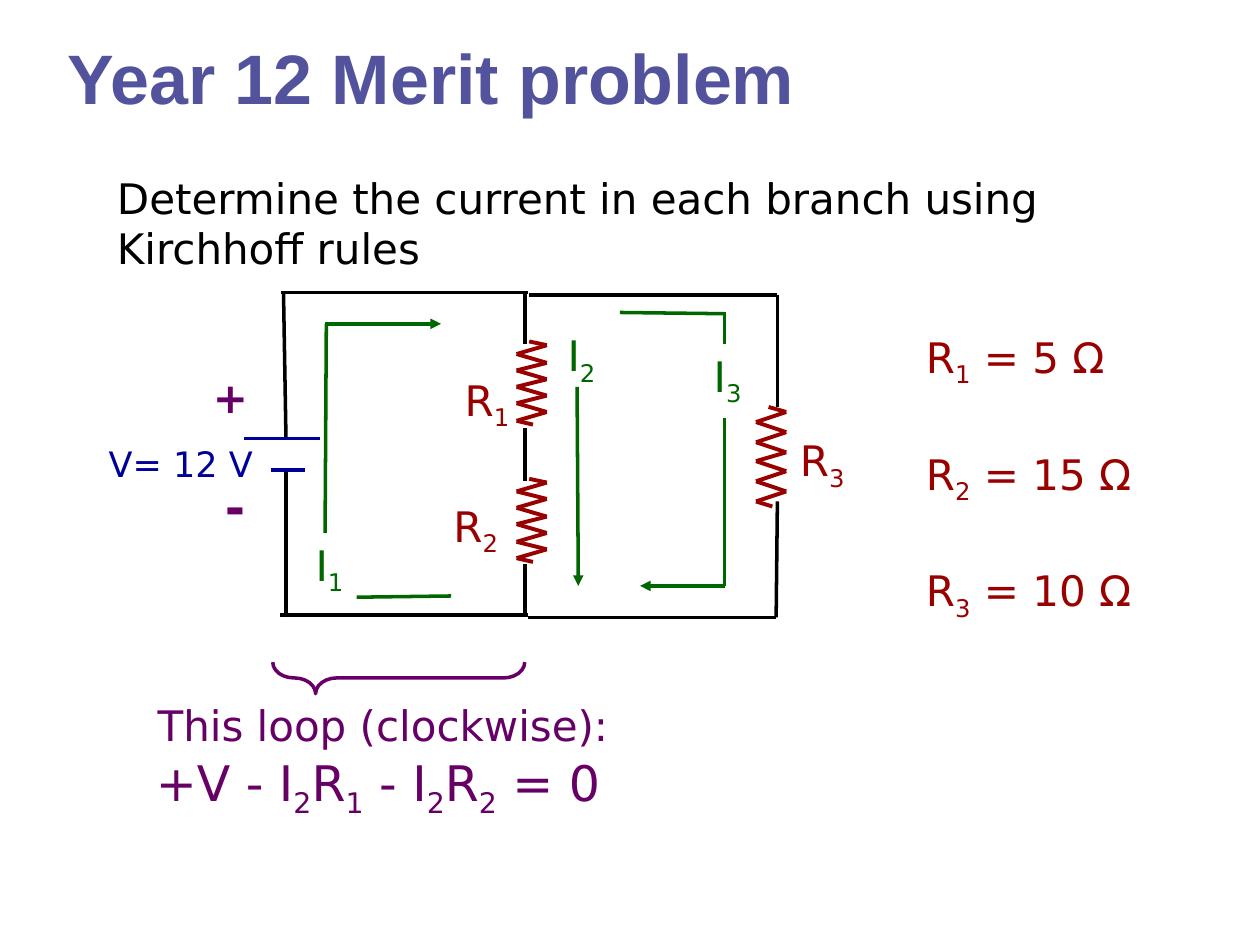
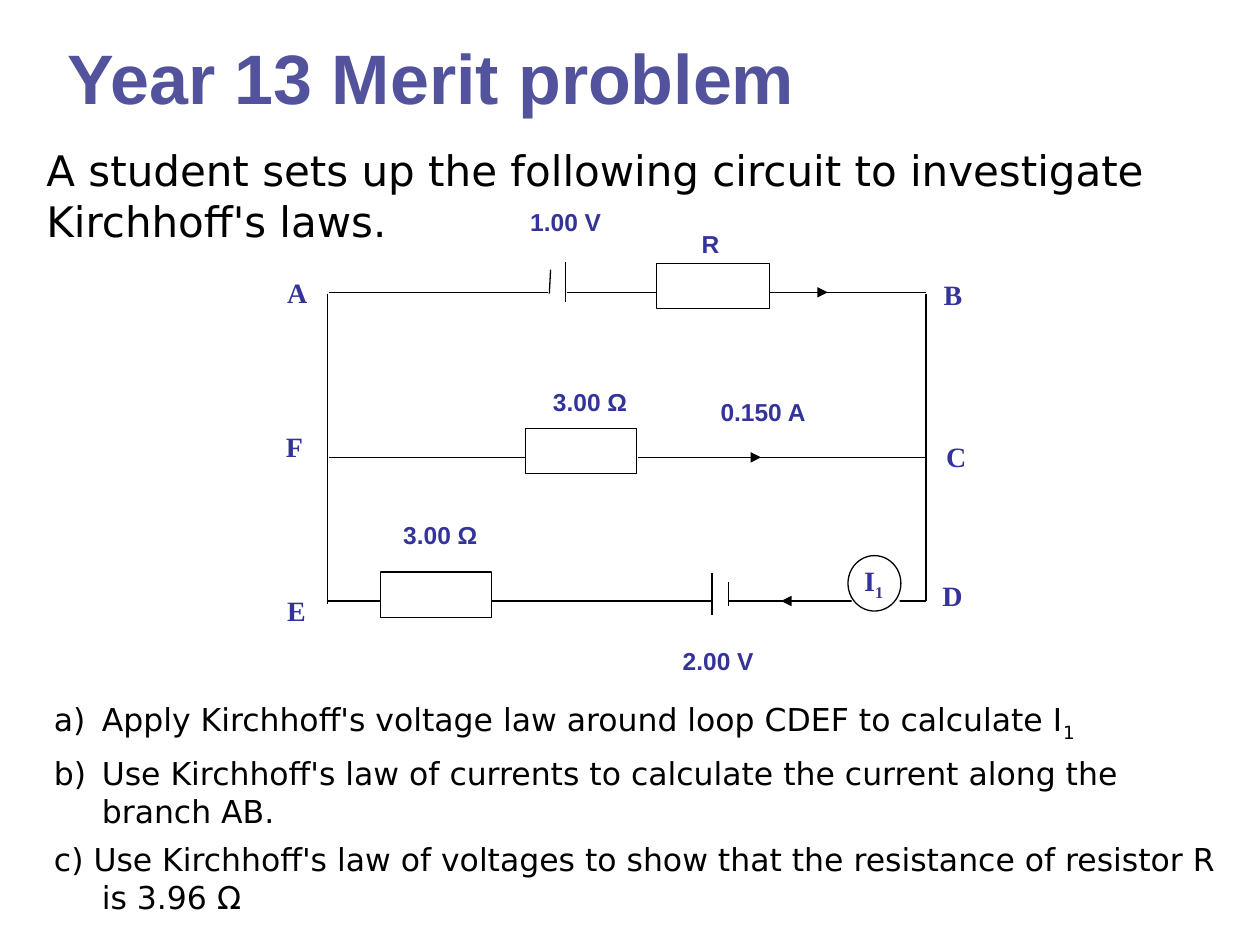
from dataclasses import dataclass
from itertools import pairwise

from pptx import Presentation
from pptx import util as u
from pptx.dml.color import RGBColor
from pptx.enum import shapes, text
from pptx.oxml.ns import qn
from lxml import etree

PX = 9144
SHAPE = shapes.MSO_SHAPE
LEFT, CENTER = text.PP_ALIGN.LEFT, text.PP_ALIGN.CENTER


@dataclass(frozen=True)
class Theme:
    title: str = "52529D"
    ink: str = "000000"
    paper: str = "FFFFFF"
    current: str = "006600"
    loop: str = "660066"
    resistor: str = "990000"
    battery: str = "000099"
    label: str = "333399"
    heading_font: str = "Arial"
    body_font: str = "DejaVu Sans"
    node_font: str = "Times New Roman"
    title_size: int = 40
    equation_size: int = 28
    body_size: int = 24
    battery_size: int = 20
    question_size: int = 18
    node_size: int = 16
    label_size: int = 14
    wire: float = 2
    heavy: float = 2.25
    thin: float = 0.75


def emu(*lengths):
    return [u.Emu(round(n) * PX) for n in lengths]


class Deck:
    def __init__(self, theme):
        self.theme = theme
        self.prs = Presentation()
        self.prs.slide_width, self.prs.slide_height = emu(1000, 750)
        self.slide = None

    def new_slide(self, title):
        t = self.theme
        self.slide = self.prs.slides.add_slide(self.prs.slide_layouts[5])
        sp = self.slide.shapes.title
        sp.left, sp.top, sp.width, sp.height = emu(40, 22, 604, 77)
        self.fill_text(sp, [title], t.title_size, t.title, t.heading_font, CENTER, True, wrap=False)

    def fill_text(self, sp, lines, size, color, font=None, align=LEFT, bold=False, after=0, wrap=True):
        tf = sp.text_frame
        frame = {"word_wrap": wrap, "auto_size": text.MSO_AUTO_SIZE.NONE,
                 "vertical_anchor": text.MSO_ANCHOR.TOP}
        for name, value in frame.items():
            setattr(tf, name, value)
        style = {"size": u.Pt(size), "bold": bold, "name": font or self.theme.body_font}
        for i, line in enumerate(lines):
            p = tf.paragraphs[0] if i == 0 else tf.add_paragraph()
            for name, value in {"alignment": align, "space_after": u.Pt(after)}.items():
                setattr(p, name, value)
            first, *rest = line.split("_")
            pieces = [(first, False)]
            for part in rest:
                pieces += [(part[0], True), (part[1:], False)]
            for piece, lowered in pieces:
                if not piece:
                    continue
                r = p.add_run()
                r.text = piece
                for name, value in style.items():
                    setattr(r.font, name, value)
                r.font.color.rgb = RGBColor.from_string(color)
                if lowered:
                    r._r.get_or_add_rPr().set("baseline", "-25000")
        return tf

    def text(self, box, lines, size, color, **style):
        sp = self.slide.shapes.add_textbox(*emu(*box))
        return self.fill_text(sp, lines, size, color, **style)

    def shape(self, kind, box, fill=None, line=None, width=0.75):
        sp = self.slide.shapes.add_shape(kind, *emu(*box))
        sp.shadow.inherit = False
        if fill:
            sp.fill.solid()
            sp.fill.fore_color.rgb = RGBColor.from_string(fill)
        else:
            sp.fill.background()
        if line:
            sp.line.color.rgb = RGBColor.from_string(line)
            sp.line.width = u.Pt(width)
        else:
            sp.line.fill.background()
        return sp

    def line(self, ends, color, width, arrow=False):
        sp = self.slide.shapes.add_connector(shapes.MSO_CONNECTOR.STRAIGHT, *emu(*ends))
        sp.line.color.rgb = RGBColor.from_string(color)
        sp.line.width = u.Pt(width)
        if arrow:
            etree.SubElement(sp.get_or_add_ln(), qn("a:tailEnd"), type="triangle")
        etree.SubElement(sp._element.spPr, qn("a:effectLst"))

    def lines(self, segments, color, width, arrow=False):
        for ends in segments:
            self.line(ends, color, width, arrow)

    def zigzag(self, left, top, bottom):
        pitch = (bottom - top) / 10
        points = [(left + 10, top)]
        points += [(left + 24 * (i % 2 == 0), top + pitch * (i + 0.5)) for i in range(10)]
        points.append((left + 13, bottom))
        self.lines([a + b for a, b in pairwise(points)], self.theme.resistor, self.theme.heavy)

    def label(self, box, words, size, font, align=LEFT):
        sp = self.shape(SHAPE.RECTANGLE, box, self.theme.paper)
        self.fill_text(sp, [words], size, self.theme.label, font, align, True)

    def numbered(self, p, indent, numbering):
        pPr = p._p.get_or_add_pPr()
        pPr.set("marL", str(indent * PX))
        pPr.set("indent", str(-indent * PX))
        if numbering:
            etree.SubElement(pPr, qn("a:buFont"), typeface=self.theme.body_font)
            etree.SubElement(pPr, qn("a:buAutoNum"), type=numbering)


def year_12(deck):
    t = deck.theme
    deck.new_slide("Year 12 Merit problem")
    deck.text((83, 132, 808, 91), ["Determine the current in each branch using Kirchhoff rules"],
              t.body_size, t.ink)

    outer_wires = [
        (223, 232, 419, 232), (227, 348, 225, 232), (227, 490, 227, 373), (222, 488, 419, 488),
        (420, 234, 617, 234), (617, 234, 617, 323), (617, 398, 616, 490), (419, 490, 616, 490),
    ]
    middle_wires = [(417, top, 417, bottom) for top, bottom in ((232, 273), (340, 382), (448, 490))]
    battery_plates = [(194, 348, 254, 348), (215, 373, 242, 373)]
    deck.lines(outer_wires, t.ink, t.wire)
    deck.lines(middle_wires, t.ink, t.heavy)
    deck.lines(battery_plates, t.battery, t.heavy)

    for left, top, bottom in ((410, 271, 337), (410, 380, 446), (600, 323, 402)):
        deck.zigzag(left, top, bottom)

    current_lines = [
        (358, 473, 283, 474), (258, 423, 259, 257),
        (492, 248, 575, 249), (575, 248, 575, 273), (575, 332, 575, 465),
    ]
    current_arrows = [(258, 257, 350, 257), (458, 307, 459, 465), (575, 465, 508, 465)]
    deck.lines(current_lines, t.current, t.wire)
    deck.lines(current_arrows, t.current, t.wire, arrow=True)

    symbols = [
        ("I_1", 217, 423, t.current), ("I_2", 417, 257, t.current), ("I_3", 533, 273, t.current),
        ("R_1", 342, 292, t.resistor), ("R_2", 333, 392, t.resistor), ("R_3", 608, 340, t.resistor),
    ]
    for words, left, top, color in symbols:
        deck.text((left, top, 89, 50), [words], t.body_size, color, align=CENTER)

    deck.text((75, 346, 137, 44), ["V= 12 V"], t.battery_size, t.battery, align=CENTER)
    deck.text((158, 290, 50, 50), ["+"], t.body_size, t.loop, align=CENTER, bold=True)
    deck.text((167, 373, 39, 57), ["-"], t.equation_size, t.loop, align=CENTER, bold=True)

    brace = deck.shape(SHAPE.LEFT_BRACE, (304, 438, 25, 200), line=t.loop, width=t.wire)
    brace.rotation = 270
    brace.adjustments[0], brace.adjustments[1] = 0.67, 0.17
    deck.text((75, 550, 458, 50), ["This loop (clockwise):"], t.body_size, t.loop, align=CENTER)
    deck.text((50, 592, 500, 57), ["+V - I_2R_1 - I_2R_2 = 0"], t.equation_size, t.loop, align=CENTER)

    resistances = [f"R_{i} = {ohms} Ω" for i, ohms in enumerate((5, 15, 10), 1)]
    deck.text((725, 258, 275, 293), resistances, t.body_size, t.resistor, after=34)


def year_13(deck):
    t = deck.theme
    deck.new_slide("Year 13 Merit problem")
    deck.text((27, 110, 908, 91),
              ["A student sets up the following circuit to investigate Kirchhoff's laws."],
              t.body_size, t.ink)

    side_wires = [(260, 233, 260, 479), (735, 477, 735, 233)]
    branch_wires = [
        (435, 232, 261, 232), (450, 232, 522, 232), (735, 232, 611, 232),
        (418, 363, 261, 363), (735, 363, 506, 363),
        (303, 477, 260, 477), (564, 477, 390, 477), (735, 477, 578, 477),
    ]
    cell_plates = [(437, 214, 436, 233), (449, 208, 449, 240), (578, 462, 578, 481), (565, 455, 565, 488)]
    deck.lines(side_wires + branch_wires + cell_plates, t.ink, t.thin)
    current_arrows = [(646, 232, 657, 232), (594, 363, 604, 363), (636, 477, 620, 477)]
    deck.lines(current_arrows, t.ink, t.thin, arrow=True)

    for box in ((521, 209, 90, 36), (417, 340, 88, 36), (302, 454, 88, 36)):
        deck.shape(SHAPE.RECTANGLE, box, t.paper, t.ink, t.thin)

    nodes = [("A", 218, 214), ("B", 739, 215), ("C", 741, 344),
             ("D", 738, 454), ("E", 218, 466), ("F", 217, 336)]
    for name, left, top in nodes:
        deck.label((left, top, 39, 39), name, t.node_size, t.node_font)
    deck.label((676, 442, 38, 62), "I_1", t.node_size, t.node_font)
    deck.shape(SHAPE.OVAL, (673, 441, 42, 44), line=t.ink, width=t.thin)

    for words, box in (("1.00 V", (411, 159, 82, 37)), ("2.00 V", (532, 508, 89, 43)),
                       ("0.150 A", (562, 310, 99, 35))):
        deck.label(box, words, t.label_size, t.heading_font)
    for words, box, align in (("R", (539, 177, 50, 48), CENTER), ("3.00 Ω", (429, 302, 111, 50), LEFT),
                              ("3.00 Ω", (304, 408, 91, 34), CENTER)):
        deck.text(box, [words], t.label_size, t.label, font=t.heading_font, align=align, bold=True)

    questions = [
        "Apply Kirchhoff's voltage law around loop CDEF to calculate I_1",
        "Use Kirchhoff's law of currents to calculate the current along the branch AB.",
        "c) Use Kirchhoff's law of voltages to show that the resistance of resistor R is 3.96 Ω",
    ]
    tf = deck.text((33, 551, 942, 183), questions, t.question_size, t.ink, after=6)
    for p, numbering in zip(tf.paragraphs, ("alphaLcParenR", "alphaLcParenR", None)):
        deck.numbered(p, 38, numbering)


def main():
    deck = Deck(Theme())
    year_12(deck)
    year_13(deck)
    deck.prs.save("out.pptx")


if __name__ == "__main__":
    main()
